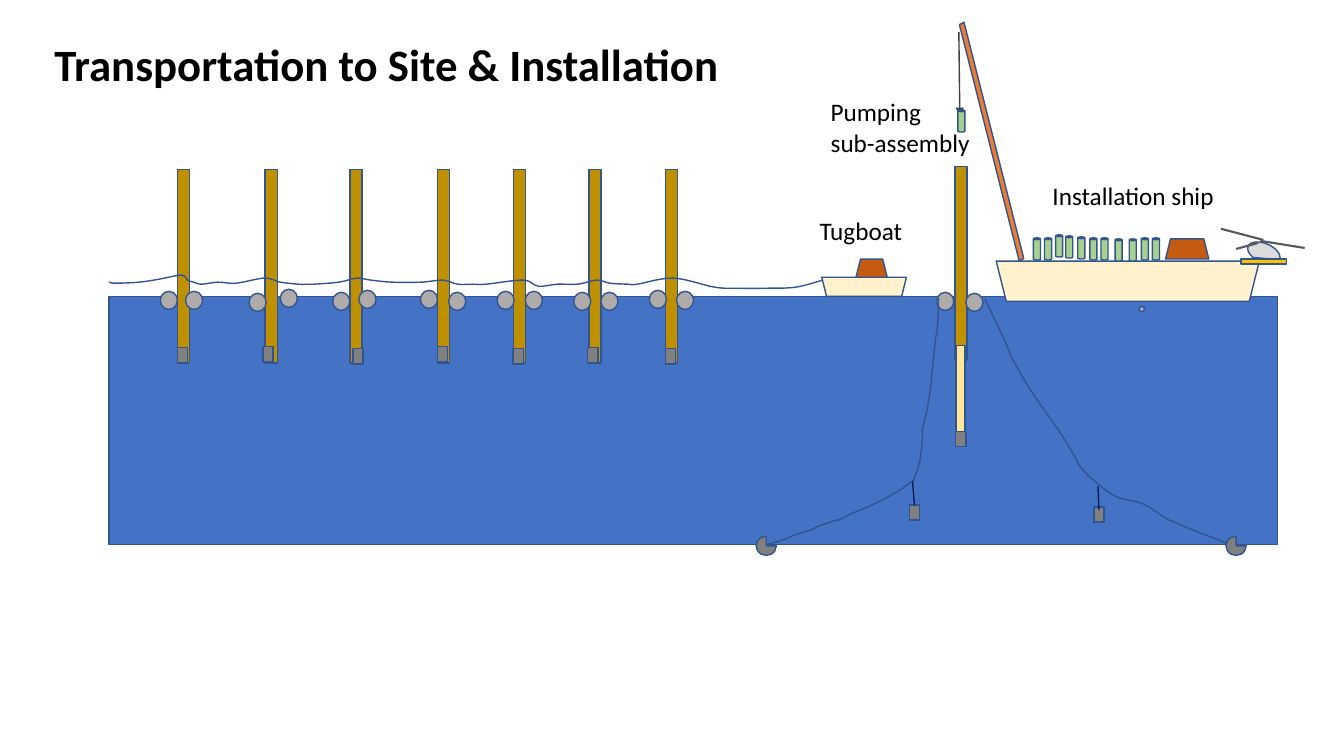
from dataclasses import dataclass

import pptx
import pptx.dml.color
import pptx.enum.shapes
import pptx.enum.text
import pptx.oxml.ns
import pptx.util
from lxml import etree

Inches = pptx.util.Inches
Kind = pptx.enum.shapes.MSO_SHAPE
qn = pptx.oxml.ns.qn
Point = tuple[float, float]

OUTLINE = "325491"
WOOD, STEEL, FLOAT = "BF9000", "808080", "AFABAB"
HULL, CABIN, PUMP = "FFF2CC", "C55A11", "A9D18E"


@dataclass(frozen=True)
class Part:
    kind: Kind
    left: float
    top: float
    width: float
    height: float
    fill: str
    rotation: float = 0
    flipped: bool = False


@dataclass(frozen=True)
class Line:
    start: Point
    end: Point
    color: str
    width: float = 1
    arrow: bool = False


@dataclass(frozen=True)
class Label:
    text: str
    left: float
    top: float
    width: float
    height: float
    size: float = 18
    bold: bool = False


@dataclass(frozen=True)
class Pole:
    left: float
    weight: Point
    floats: tuple[Point, Point]
    top: float = 1.68


def rgb(color: str) -> pptx.dml.color.RGBColor:
    return pptx.dml.color.RGBColor.from_string(color)


def draw_part(page, part: Part) -> None:
    shape = page.shapes.add_shape(part.kind, Inches(part.left), Inches(part.top),
                                  Inches(part.width), Inches(part.height))
    shape.shadow.inherit = False
    shape.fill.solid()
    shape.fill.fore_color.rgb = rgb(part.fill)
    shape.line.color.rgb = rgb(OUTLINE)
    shape.line.width = pptx.util.Pt(1)
    shape.rotation = part.rotation
    if part.flipped:
        shape._element.spPr.xfrm.set("flipV", "1")


def draw_line(page, line: Line) -> None:
    connector = page.shapes.add_connector(
        pptx.enum.shapes.MSO_CONNECTOR.STRAIGHT,
        *(Inches(value) for value in line.start + line.end))
    connector.line.color.rgb = rgb(line.color)
    connector.line.width = pptx.util.Pt(line.width)
    if line.arrow:
        etree.SubElement(connector.line._get_or_add_ln(), qn("a:tailEnd"), type="triangle")
    etree.SubElement(connector._element.spPr, qn("a:effectLst"))


def bend(rope) -> None:
    """Turn the straight segments of a freeform into smooth cubic curves."""
    ends = [(int(point.get("x")), int(point.get("y")))
            for point in rope._element.iter(qn("a:pt"))]
    padded = [ends[0], *ends, ends[-1]]
    segments = list(rope._element.iter(qn("a:lnTo")))
    for segment, a, b, c, d in zip(segments, padded, padded[1:], padded[2:], padded[3:]):
        curve = etree.Element(qn("a:cubicBezTo"))
        first = [q + (r - p) / 6 for p, q, r in zip(a, b, c)]
        second = [r - (s - q) / 6 for q, r, s in zip(b, c, d)]
        for x, y in (first, second, c):
            etree.SubElement(curve, qn("a:pt"), x=str(round(x)), y=str(round(y)))
        segment.getparent().replace(segment, curve)


def draw_rope(page, points: list[Point]) -> None:
    start, *rest = [(Inches(x), Inches(y)) for x, y in points]
    builder = page.shapes.build_freeform(*start)
    builder.add_line_segments(rest, close=False)
    rope = builder.convert_to_shape()
    bend(rope)
    rope.shadow.inherit = False
    rope.fill.background()
    rope.line.color.rgb = rgb(OUTLINE)
    rope.line.width = pptx.util.Pt(1)


def draw_label(page, label: Label) -> None:
    box = page.shapes.add_textbox(Inches(label.left), Inches(label.top),
                                  Inches(label.width), Inches(label.height))
    frame = box.text_frame
    frame.text = label.text
    frame.word_wrap = False
    frame.auto_size = pptx.enum.text.MSO_AUTO_SIZE.SHAPE_TO_FIT_TEXT
    for para in frame.paragraphs:
        for span in para.runs:
            span.font.name = "Calibri"
            span.font.size = pptx.util.Pt(label.size)
            span.font.bold = label.bold
            span.font.color.rgb = rgb("000000")


def weight(left: float, top: float) -> Part:
    return Part(Kind.RECTANGLE, left, top, 0.1, 0.15, STEEL)


def pump(left: float, top: float) -> Part:
    return Part(Kind.CAN, left, top, 0.07, 0.22, PUMP)


def pole_parts(pole: Pole) -> list[Part]:
    return [Part(Kind.RECTANGLE, pole.left, pole.top, 0.12, 1.92, WOOD),
            weight(*pole.weight),
            *(Part(Kind.OVAL, x, y, 0.17, 0.18, FLOAT) for x, y in pole.floats)]


WATER = Part(Kind.RECTANGLE, 1.08, 2.94, 11.59, 2.46, "4472C4")
TOWED_POLES = [
    Pole(1.76, (1.76, 3.45), ((1.59, 2.89), (1.84, 2.89))),
    Pole(2.63, (2.61, 3.44), ((2.47, 2.91), (2.78, 2.87))),
    Pole(3.47, (3.5, 3.46), ((3.3, 2.9), (3.56, 2.88))),
    Pole(4.34, (4.34, 3.44), ((4.17, 2.88), (4.45, 2.9))),
    Pole(5.09, (5.09, 3.46), ((4.93, 2.89), (5.21, 2.89))),
    Pole(5.84, (5.83, 3.45), ((5.69, 2.9), (5.96, 2.9))),
    Pole(6.6, (6.6, 3.46), ((6.44, 2.88), (6.71, 2.89))),
]
INSTALLED_POLE = Pole(9.47, (9.48, 4.28), ((9.29, 2.9), (9.58, 2.91)), 1.65)
TUBE = Part(Kind.RECTANGLE, 9.48, 3.43, 0.09, 1, "FFE699")
TUGBOAT = [
    Part(Kind.OVAL, 11.3, 3.04, 0.05, 0.05, FLOAT, flipped=True),
    Part(Kind.TRAPEZOID, 8.15, 2.75, 0.84, 0.19, HULL, 180),
    Part(Kind.TRAPEZOID, 8.49, 2.57, 0.31, 0.18, CABIN),
]
SHIP = [
    Part(Kind.TRAPEZOID, 9.88, 2.59, 2.61, 0.4, HULL, 180),
    Part(Kind.TRAPEZOID, 11.56, 2.37, 0.43, 0.2, CABIN),
    Part(Kind.PARALLELOGRAM, 8.62, 1.38, 2.43, 0.05, "ED7D31", 75.8, True),
]
PUMPS = [(11.06, 2.37), (10.92, 2.36), (10.81, 2.36), (10.69, 2.35), (10.57, 2.34),
         (10.47, 2.33), (11.2, 2.37), (11.32, 2.36), (11.43, 2.36), (10.25, 2.36),
         (10.36, 2.36), (9.5, 1.09)]
TOW_ROPE = [
    (8.16, 2.78), (7.89, 2.85), (7.59, 2.86), (7.32, 2.86), (7.09, 2.85), (6.68, 2.76),
    (6.32, 2.82), (6.23, 2.82), (6.05, 2.81), (5.92, 2.78), (5.73, 2.82), (5.53, 2.82),
    (5.34, 2.84), (5.19, 2.78), (4.82, 2.82), (4.69, 2.82), (4.54, 2.82), (4.39, 2.78),
    (4.18, 2.8), (3.89, 2.8), (3.68, 2.78), (3.54, 2.76), (3.36, 2.8), (3.11, 2.82),
    (3.05, 2.82), (2.96, 2.82), (2.78, 2.8), (2.72, 2.78), (2.61, 2.76), (2.34, 2.81),
    (2.16, 2.8), (2, 2.82), (1.92, 2.8), (1.86, 2.78), (1.8, 2.73), (1.58, 2.77),
    (1.38, 2.8), (1.15, 2.81), (1.08, 2.8)]
MOORINGS = [
    [(9.77, 2.97), (9.97, 3.39), (10.04, 3.56), (10.22, 3.87), (10.33, 4.03),
     (10.52, 4.3), (10.66, 4.53), (10.73, 4.65), (10.9, 4.81), (11.08, 4.93),
     (11.34, 5), (11.56, 5.14), (11.65, 5.18), (11.86, 5.27), (12.12, 5.37), (12.29, 5.45)],
    [(9.31, 2.96), (9.3, 3.22), (9.28, 3.36), (9.26, 3.54), (9.24, 3.74), (9.23, 3.84),
     (9.2, 4.04), (9.15, 4.26), (9.15, 4.31), (9.14, 4.45), (9.12, 4.59), (9.07, 4.74),
     (9.05, 4.77), (8.93, 4.86), (8.81, 4.93), (8.69, 4.99), (8.61, 5.03), (8.46, 5.09),
     (8.32, 5.16), (8.3, 5.16), (8.12, 5.22), (8.04, 5.26), (7.97, 5.28), (7.85, 5.32),
     (7.81, 5.34), (7.69, 5.38), (7.57, 5.41), (7.5, 5.42)],
]
CRANE_CABLE = Line((9.51, 0.32), (9.52, 1.15), "404040", arrow=True)
WEIGHT_CABLES = [Line((9.05, 4.77), (9.07, 5.01), "002060"),
                 Line((10.89, 4.82), (10.9, 5.06), "002060")]
HELICOPTER = Part(Kind.CHORD, 12.44, 2.34, 0.19, 0.34, "DBDBDB", 113.2)
ROTORS = [Line((12.26, 2.47), (12.48, 2.41), "595959", 1.5),
          Line((12.11, 2.27), (12.53, 2.38), "595959", 1.5),
          Line((12.5, 2.39), (12.94, 2.46), "595959", 1.5)]
HELIPAD = Part(Kind.RECTANGLE, 12.31, 2.57, 0.45, 0.05, "FFC000", flipped=True)
ANCHORS = [Part(Kind.PIE, left, 5.32, 0.2, 0.19, STEEL) for left in (12.16, 7.5)]
TITLE = Label("Transportation to Site & Installation", 0.44, 0.32, 6.86, 0.64, 32, True)
VESSEL_LABELS = [Label("Tugboat", 8.03, 2.09, 1.03, 0.4),
                 Label("Installation ship", 10.34, 1.74, 1.82, 0.4)]
PUMP_LABEL = Label("Pumping\nsub-assembly", 8.14, 0.91, 1.59, 0.71)


def main() -> None:
    deck = pptx.Presentation()
    deck.slide_width, deck.slide_height = Inches(13.33), Inches(7.5)
    page = deck.slides.add_slide(deck.slide_layouts[6])

    # Title, sea, towed poles and vessels
    draw_label(page, TITLE)
    towed = [part for pole in TOWED_POLES for part in pole_parts(pole)]
    for part in [WATER, *towed, *TUGBOAT]:
        draw_part(page, part)
    draw_rope(page, TOW_ROPE)
    for part in SHIP:
        draw_part(page, part)
    draw_line(page, CRANE_CABLE)
    for label in VESSEL_LABELS:
        draw_label(page, label)

    # Pumps and the pole being installed
    column, *fittings = pole_parts(INSTALLED_POLE)
    for part in [*(pump(*place) for place in PUMPS), column, TUBE, *fittings]:
        draw_part(page, part)

    # Moorings with their weights
    for points in MOORINGS:
        draw_rope(page, points)
    for place in ((10.85, 5.03), (9.02, 5.01)):
        draw_part(page, weight(*place))
    for line in WEIGHT_CABLES:
        draw_line(page, line)

    # Helicopter and anchors
    draw_part(page, HELICOPTER)
    for line in ROTORS:
        draw_line(page, line)
    for part in [HELIPAD, *ANCHORS]:
        draw_part(page, part)
    draw_label(page, PUMP_LABEL)
    deck.save("out.pptx")


if __name__ == "__main__":
    main()
